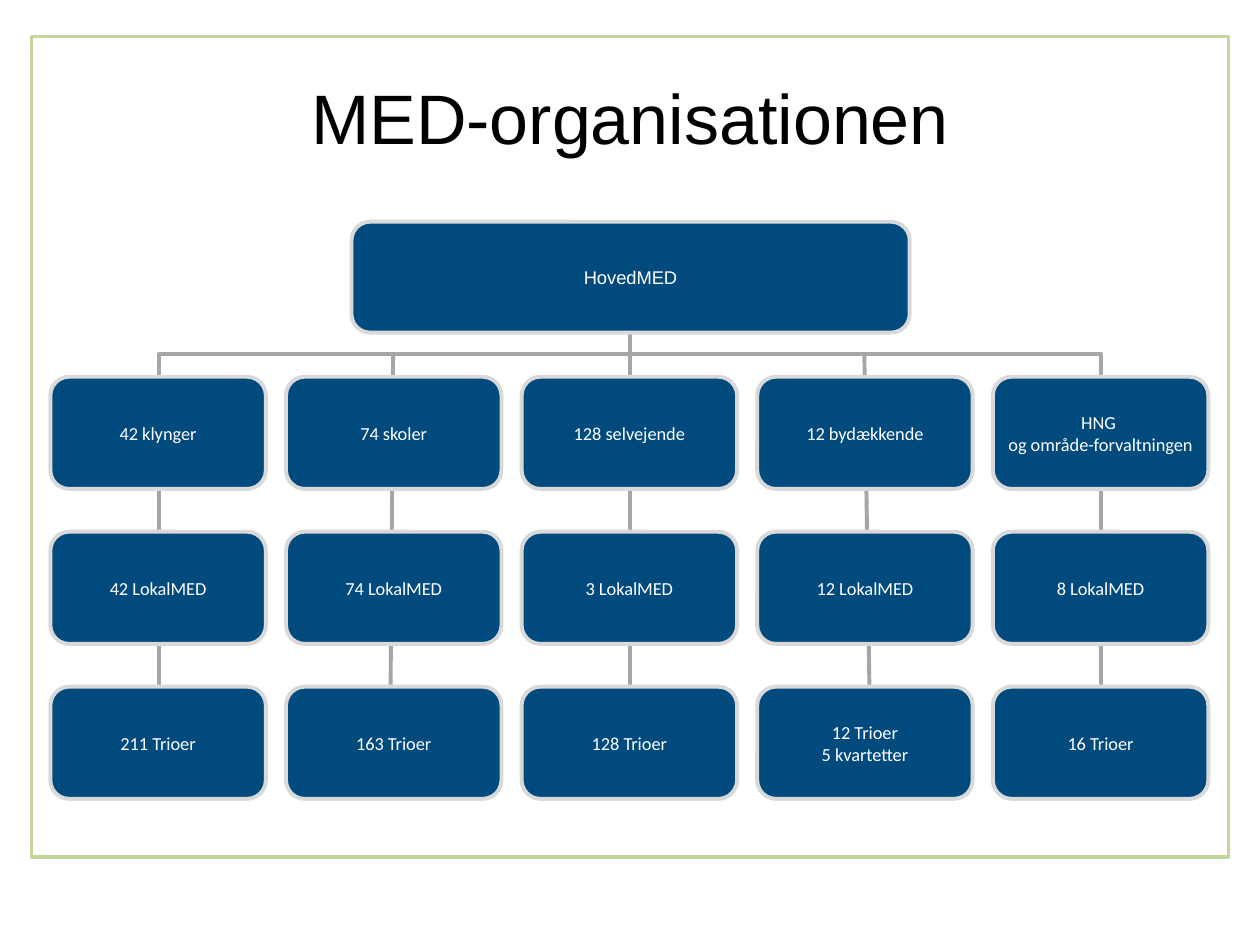
"""Build the MED organisation chart slide."""
from dataclasses import dataclass

import pptx
import pptx.dml.color
import pptx.enum.shapes
import pptx.enum.text
import pptx.oxml
import pptx.util
from pptx.util import Inches

TITLE = "MED-organisationen"
ROOT = "HovedMED"
ROWS = [
    ["42 klynger", "74 skoler", "128 selvejende", "12 bydækkende",
     "HNG \vog område-forvaltningen"],
    ["42 LokalMED", "74 LokalMED", "3 LokalMED", "12 LokalMED", "8 LokalMED"],
    ["211 Trioer", "163 Trioer", "128 Trioer", "12 Trioer\v5 kvartetter", "16 Trioer"],
]

LEFT, TOP = 0.4, 2.99
BOX_W, BOX_H = 1.71, 0.89
STEP_X, STEP_Y = 1.87, 1.23
ROOT_BOX = (2.79, 1.76, 4.43, 0.88)
HUB_X, HUB_Y = 5, 2.81
FOOT_Y = TOP + 2 * STEP_Y
BRANCHES = [
    ("line", (3.12, HUB_Y), 3.1),
    ("line", (6.86, HUB_Y), 6.9),
    ("bentConnector2", (HUB_X, HUB_Y), 8.74),
    ("bentConnector2", (HUB_X, HUB_Y), 1.26),
    ("line", (HUB_X, ROOT_BOX[1] + ROOT_BOX[3]), HUB_X),
]


@dataclass(frozen=True)
class Theme:
    """Colours, fonts and sizes of the slide."""
    text: str = "000000"
    box: str = "004A7E"
    box_text: str = "FFFFFF"
    box_line: str = "D9D9D9"
    branch: str = "A6A6A6"
    frame: str = "C3D69B"
    head_font: str = "Arial"
    body_font: str = "Calibri"
    title_size: float = 40
    box_size: float = 10.5
    line: float = 2.25
    frame_line: float = 2


THEME = Theme()
ANCHOR = {"word_wrap": True, "vertical_anchor": pptx.enum.text.MSO_ANCHOR.MIDDLE}
BOX_FRAME = ANCHOR | {
    "margin_left": Inches(0.06), "margin_right": Inches(0.06),
    "margin_top": Inches(0.03), "margin_bottom": Inches(0.03),
}


def apply(target, values):
    """Set each named attribute on the target."""
    for name, value in values.items():
        setattr(target, name, value)


def rgb(code):
    """Return a colour object for a hex code."""
    return pptx.dml.color.RGBColor.from_string(code)


def stroke(s, colour, width):
    """Give a shape or connector a solid line."""
    s.line.color.rgb = rgb(colour)
    s.line.width = pptx.util.Pt(width)


def write(s, text, frame, font, size, colour):
    """Put one centred paragraph into a shape."""
    tf = s.text_frame
    apply(tf, frame)
    p = tf.paragraphs[0]
    p.text = text
    p.alignment = pptx.enum.text.PP_ALIGN.CENTER
    for r in p.runs:
        apply(r.font, {"name": font, "size": pptx.util.Pt(size)})
        r.font.color.rgb = rgb(colour)


def add_branch(shapes, preset, start, foot_x):
    """Draw a connector from its start down to the bottom row."""
    c = shapes.add_connector(
        pptx.enum.shapes.MSO_CONNECTOR.STRAIGHT,
        *map(Inches, (*start, foot_x, FOOT_Y)))
    stroke(c, THEME.branch, THEME.line)
    props = c._element.spPr
    props.prstGeom.set("prst", preset)
    props.append(pptx.oxml.parse_xml(
        '<a:effectLst xmlns:a="http://schemas.openxmlformats.org/drawingml/2006/main"/>'))


def add_box(shapes, text, place, font):
    """Draw one rounded box of the chart."""
    s = shapes.add_shape(
        pptx.enum.shapes.MSO_SHAPE.ROUNDED_RECTANGLE, *map(Inches, place))
    s.shadow.inherit = False
    s.fill.solid()
    s.fill.fore_color.rgb = rgb(THEME.box)
    stroke(s, THEME.box_line, THEME.line)
    write(s, text, BOX_FRAME, font, THEME.box_size, THEME.box_text)


def main():
    """Build and save the slide."""
    prs = pptx.Presentation()
    apply(prs, {"slide_width": Inches(10), "slide_height": Inches(7.5)})
    shapes = prs.slides.add_slide(prs.slide_layouts[6]).shapes

    title = shapes.add_textbox(*map(Inches, (0.5, 0.3, 9, 1.25)))
    write(title, TITLE, ANCHOR, THEME.head_font, THEME.title_size, THEME.text)

    border = shapes.add_shape(
        pptx.enum.shapes.MSO_SHAPE.RECTANGLE, *map(Inches, (0.25, 0.29, 9.5, 6.51)))
    border.shadow.inherit = False
    border.fill.background()
    stroke(border, THEME.frame, THEME.frame_line)

    chart = shapes.add_group_shape().shapes
    for branch in BRANCHES:
        add_branch(chart, *branch)
    add_box(chart, ROOT, ROOT_BOX, THEME.head_font)
    for i, row in enumerate(ROWS):
        for j, text in enumerate(row):
            place = (LEFT + j * STEP_X, TOP + i * STEP_Y, BOX_W, BOX_H)
            add_box(chart, text, place, THEME.body_font)

    prs.save("out.pptx")


if __name__ == "__main__":
    main()
